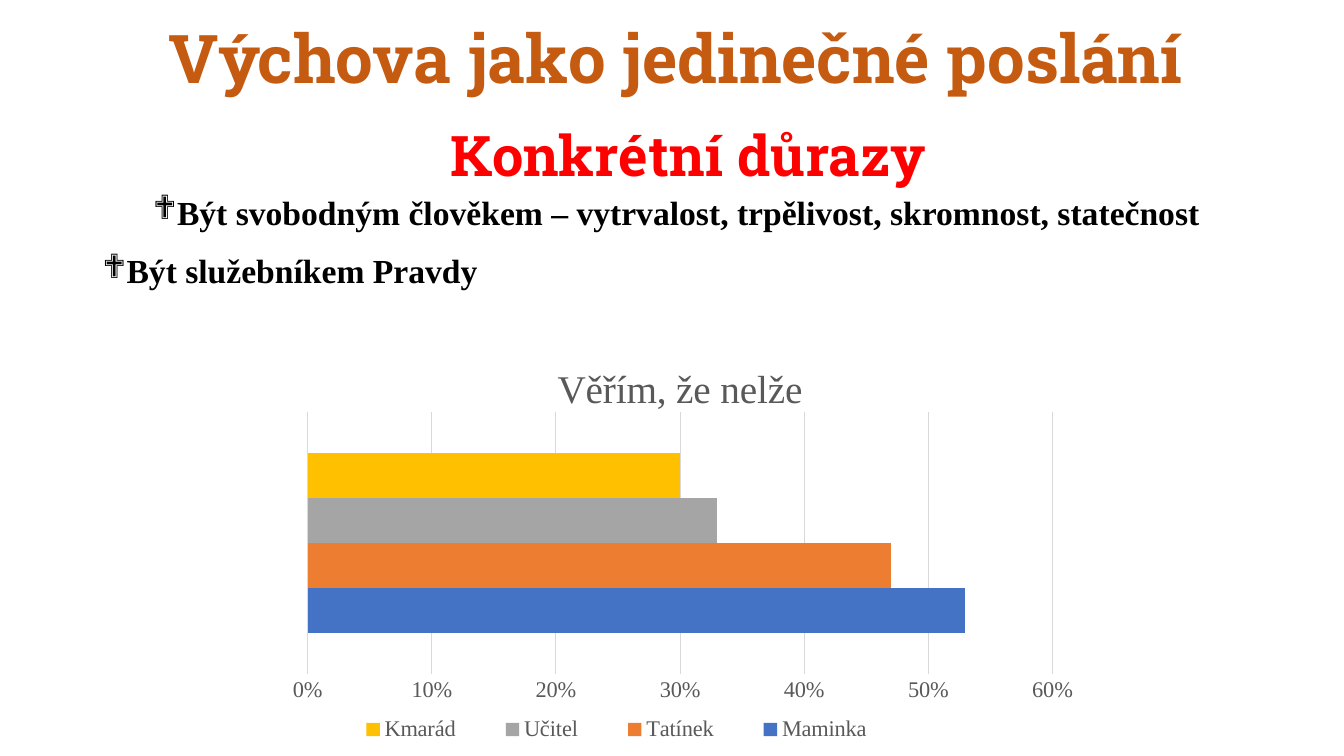
import pptx
import pptx.chart.data
import pptx.dml.color
import pptx.enum.chart
import pptx.enum.text
import pptx.oxml
import pptx.oxml.ns
import pptx.util
from pptx.util import Inches

COLORS = {
    "title": "C55A11", "subtitle": "FF0000", "body": "000000",
    "chart_text": "595959", "grid": "D9D9D9",
}
SERIES = [
    ("Maminka ", 0.53, "4472C4"),
    ("Tatínek", 0.47, "ED7D31"),
    ("Učitel", 0.33, "A5A5A5"),
    ("Kmarád", 0.30, "FFC000"),
]
SLAB, SERIF = "Roboto Slab", "Times New Roman"
CENTER = pptx.enum.text.PP_ALIGN.CENTER


def rgb(value):
    return pptx.dml.color.RGBColor.from_string(value)


def set_font(font, name, size, color, bold=False):
    font.name, font.size, font.bold = name, pptx.util.Pt(size), bold
    font.color.rgb = rgb(color)


def write(p, text, *, font, size, color, bold=True, align=None):
    p.alignment = align
    r = p.add_run()
    r.text = text
    set_font(r.font, font, size, color, bold)


def add_box(s, left, top, width, height):
    tf = s.shapes.add_textbox(Inches(left), Inches(top), Inches(width), Inches(height)).text_frame
    tf.word_wrap = True
    return tf


def set_bullet(p, margin, indent):
    pPr = p._p.get_or_add_pPr()
    pPr.set("marL", str(Inches(margin)))
    pPr.set("indent", str(Inches(indent)))
    ns = pptx.oxml.ns.nsdecls("a")
    pPr.append(pptx.oxml.parse_xml(f'<a:buFont {ns} typeface="Wingdings"/>'))
    pPr.append(pptx.oxml.parse_xml(f'<a:buChar {ns} char="❖"/>'))


def set_layout(element, before, target=None, **fractions):
    """Place a chart part by fractions of the chart area."""
    for old in element.findall(pptx.oxml.ns.qn("c:layout")):
        element.remove(old)
    inner = f'<c:layoutTarget val="{target}"/>' if target else ""
    inner += '<c:xMode val="edge"/><c:yMode val="edge"/>'
    inner += "".join(f'<c:{key} val="{val}"/>' for key, val in fractions.items())
    layout = pptx.oxml.parse_xml(
        f'<c:layout {pptx.oxml.ns.nsdecls("c")}><c:manualLayout>{inner}</c:manualLayout></c:layout>')
    element.find(pptx.oxml.ns.qn(before)).addprevious(layout)


def add_trust_chart(s):
    data = pptx.chart.data.CategoryChartData(number_format="0%")
    data.categories = ["1"]
    for name, value, _ in SERIES:
        data.add_series(name, [value])
    chart = s.shapes.add_chart(
        pptx.enum.chart.XL_CHART_TYPE.BAR_CLUSTERED,
        Inches(2.73), Inches(3.2), Inches(8.03), Inches(4.25), data).chart
    set_font(chart.font, "Calibri", 10, COLORS["body"])

    # Bars
    plot = chart.plots[0]
    plot.gap_width, plot.vary_by_categories = 182, False
    for series, (_, _, color) in zip(plot.series, SERIES):
        series.format.fill.solid()
        series.format.fill.fore_color.rgb = rgb(color)

    # Axes
    chart.category_axis.visible = False
    axis = chart.value_axis
    axis.minimum_scale, axis.maximum_scale, axis.major_unit = 0, 0.6, 0.1
    axis.major_tick_mark = pptx.enum.chart.XL_TICK_MARK.NONE
    axis.format.line.fill.background()
    axis.tick_labels.number_format = "0%"
    axis.tick_labels.number_format_is_linked = False
    set_font(axis.tick_labels.font, SERIF, 16, COLORS["chart_text"])
    grid = axis.major_gridlines.format.line
    grid.width = pptx.util.Pt(0.75)
    grid.color.rgb = rgb(COLORS["grid"])

    # Title and legend
    write(chart.chart_title.text_frame.paragraphs[0], "Věřím, že nelže",
          font=SERIF, size=28, color=COLORS["chart_text"], bold=False)
    chart.has_legend = True
    chart.legend.position = pptx.enum.chart.XL_LEGEND_POSITION.BOTTOM
    chart.legend.include_in_layout = False
    set_font(chart.legend.font, SERIF, 16, COLORS["chart_text"])

    set_layout(chart.chart_title._element, "c:overlay", x=0.34, y=0.08)
    set_layout(chart.legend._element, "c:overlay", x=0.06, y=0.91, w=0.73, h=0.08)
    set_layout(plot._element.getparent(), "c:barChart", "inner", x=0.04, y=0.21, w=0.92, h=0.61)


def main():
    prs = pptx.Presentation()
    prs.slide_width, prs.slide_height = Inches(13.33), Inches(7.5)
    s = prs.slides.add_slide(prs.slide_layouts[5])

    # Title
    title = s.shapes.title
    title.left, title.top, title.width, title.height = map(Inches, (0.68, 0, 12.05, 1.23))
    tf = title.text_frame
    tf.vertical_anchor = pptx.enum.text.MSO_ANCHOR.MIDDLE
    p = tf.paragraphs[0]
    p.line_spacing = 0.9
    write(p, "Výchova jako jedinečné poslání",
          font=SLAB, size=48, color=COLORS["title"], align=CENTER)

    # Subtitle
    tf = add_box(s, 1.55, 1.15, 10.55, 0.77)
    write(tf.paragraphs[0], "Konkrétní důrazy",
          font=SLAB, size=40, color=COLORS["subtitle"], align=CENTER)

    # Bullets
    tf = add_box(s, 0.92, 1.85, 11.81, 1.72)
    bullets = [
        ("Být svobodným člověkem – vytrvalost, trpělivost, skromnost, statečnost", 0, 0.5),
        ("Být služebníkem Pravdy", 0.12, -0.5),
    ]
    for i, (text, margin, indent) in enumerate(bullets):
        p = tf.add_paragraph() if i else tf.paragraphs[0]
        p.space_before = pptx.util.Pt(13)
        set_bullet(p, margin, indent)
        write(p, text, font=SERIF, size=24, color=COLORS["body"])

    # Chart
    add_trust_chart(s)
    prs.save("out.pptx")


if __name__ == "__main__":
    main()
